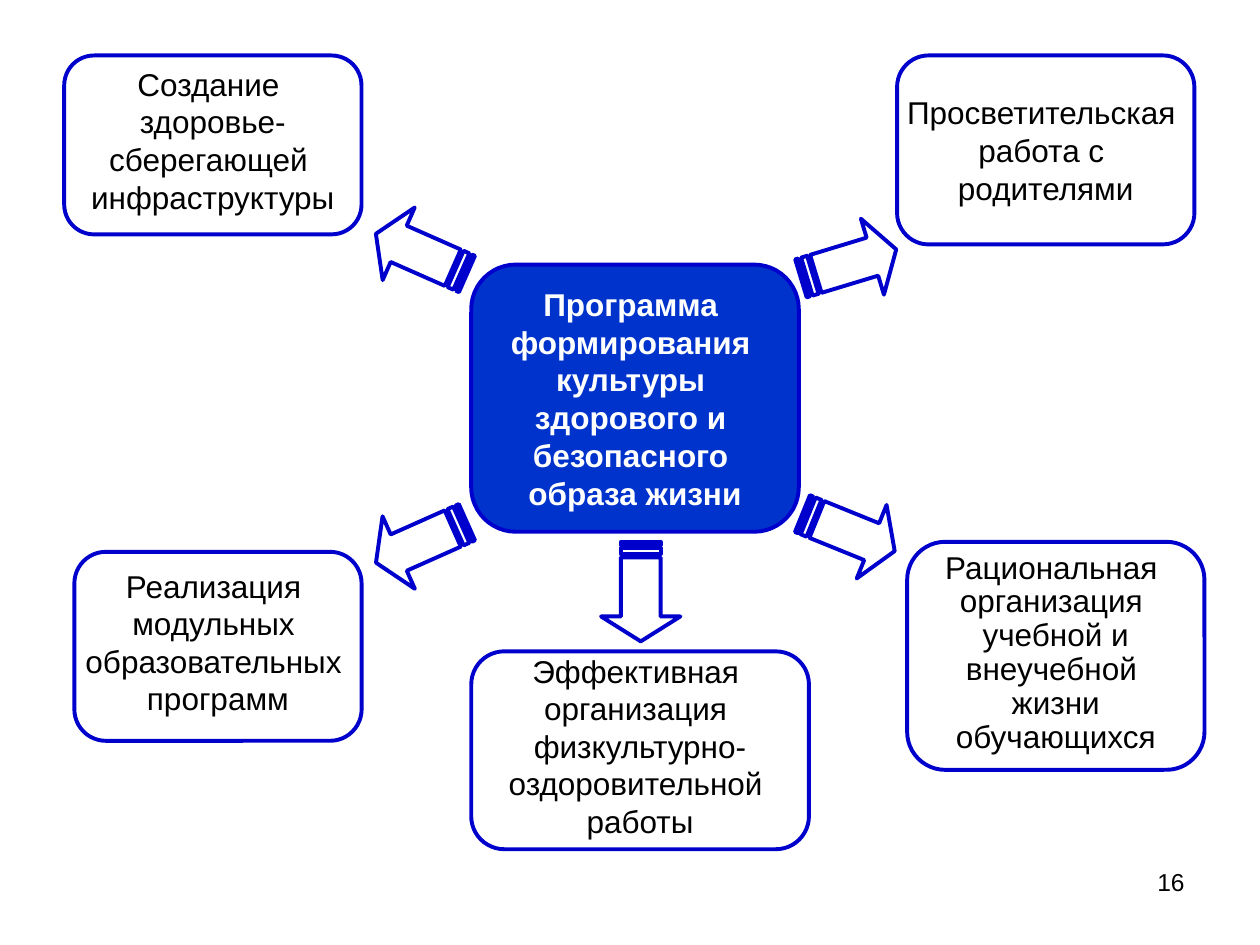
from dataclasses import dataclass
from typing import Optional

from pptx import Presentation
from pptx.dml.color import RGBColor
from pptx.enum.shapes import MSO_SHAPE
from pptx.enum.text import MSO_ANCHOR, PP_ALIGN
from pptx.util import Inches, Pt

OUTLINE = "0000CC"
CENTER_FILL = "0033CC"
BLACK = "000000"
WHITE = "FFFFFF"
FONT = "Arial"
HANGING_INDENT = Inches(0.38)
ARROW_WIDTH, ARROW_HEIGHT = 0.79, 0.63
ARROW_GRID = 1000
ARROW_OUTLINES = [
    [(750, 0), (750, 250), (156, 250), (156, 750), (750, 750), (750, 1000), (1000, 500)],
    [(62, 250), (62, 750), (125, 750), (125, 250)],
    [(0, 250), (0, 750), (31, 750), (31, 250)],
]


@dataclass
class Topic:
    left: float
    top: float
    width: float
    height: float
    lines: list[str]
    first_spacing: Optional[float] = 0.75
    other_spacing: Optional[float] = None
    central: bool = False


@dataclass
class Arrow:
    left: float
    top: float
    rotation: float


TOPICS = [
    Topic(7.12, 0.44, 2.36, 1.5, ["Просветительская ", "работа с ", "родителями"], None),
    Topic(0.51, 0.44, 2.36, 1.42,
          ["Создание ", "здоровье-", "сберегающей ", "инфраструктуры"]),
    Topic(3.74, 2.1, 2.6, 2.12,
          ["Программа ", "формирования ", "культуры ", "здорового и ",
           "безопасного ", "образа жизни"], None, central=True),
    Topic(3.74, 5.17, 2.68, 1.57,
          ["Эффективная ", "организация ", "физкультурно-", "оздоровительной ", "работы"]),
    Topic(7.2, 4.3, 2.36, 1.81,
          ["Рациональная ", "организация ", "учебной и", "внеучебной ",
           "жизни", "обучающихся"], other_spacing=0.9),
    Topic(0.59, 4.38, 2.28, 1.5,
          ["Реализация ", "модульных ", "образовательных ", "программ"]),
]

ARROWS = [
    Arrow(2.95, 3.99, 156),
    Arrow(2.95, 1.7, 203.8),
    Arrow(6.34, 1.78, 343.1),
    Arrow(6.34, 3.91, 22.1),
    Arrow(4.69, 4.38, 90),
]


def color(value: str) -> RGBColor:
    return RGBColor.from_string(value)


def style_shape(shape, fill: Optional[str] = None) -> None:
    shape.shadow.inherit = False
    shape.line.color.rgb = color(OUTLINE)
    shape.line.width = Pt(2.25)
    if fill:
        shape.fill.solid()
        shape.fill.fore_color.rgb = color(fill)
    else:
        shape.fill.background()


def style_paragraph(para, size: int, text_color: str, align, bold: bool = False) -> None:
    para.alignment = align
    para.font.name = FONT
    para.font.size = Pt(size)
    para.font.bold = bold
    para.font.color.rgb = color(text_color)


def draw_topic(page, topic: Topic) -> None:
    box = page.shapes.add_shape(
        MSO_SHAPE.ROUNDED_RECTANGLE, Inches(topic.left), Inches(topic.top),
        Inches(topic.width), Inches(topic.height))
    style_shape(box, CENTER_FILL if topic.central else None)
    frame = box.text_frame
    frame.word_wrap = False
    frame.vertical_anchor = MSO_ANCHOR.MIDDLE
    for index, line in enumerate(topic.lines):
        para = frame.add_paragraph() if index else frame.paragraphs[0]
        para.text = line
        style_paragraph(para, 18, WHITE if topic.central else BLACK,
                        PP_ALIGN.CENTER, topic.central)
        para.line_spacing = topic.other_spacing if index else topic.first_spacing
        if index == 0 and topic.first_spacing:
            para.space_before = Pt(3.6)
        if not topic.central:
            properties = para._p.get_or_add_pPr()
            properties.set("marL", str(HANGING_INDENT))
            properties.set("indent", str(-HANGING_INDENT))


def draw_arrow(page, arrow: Arrow) -> None:
    scale = (Inches(ARROW_GRID) / Inches(ARROW_WIDTH), Inches(ARROW_GRID) / Inches(ARROW_HEIGHT))
    units = (Inches(1) / scale[0], Inches(1) / scale[1])
    first, *stripes = ARROW_OUTLINES
    builder = page.shapes.build_freeform(*first[0], scale=units)
    builder.add_line_segments(first[1:], close=True)
    for stripe in stripes:
        builder.move_to(*stripe[0])
        builder.add_line_segments(stripe[1:], close=True)
    shape = builder.convert_to_shape(Inches(arrow.left), Inches(arrow.top))
    shape.rotation = arrow.rotation
    style_shape(shape)


def draw_page_number(page) -> None:
    box = page.shapes.add_textbox(Inches(7.17), Inches(6.83), Inches(2.33), Inches(0.52))
    box.text_frame.word_wrap = True
    para = box.text_frame.paragraphs[0]
    para.text = "16"
    style_paragraph(para, 14, BLACK, PP_ALIGN.RIGHT)


def main() -> None:
    deck = Presentation()
    deck.slide_width, deck.slide_height = Inches(10), Inches(7.5)
    page = deck.slides.add_slide(deck.slide_layouts[6])
    draw_page_number(page)
    for topic in TOPICS:
        draw_topic(page, topic)
    for arrow in ARROWS:
        draw_arrow(page, arrow)
    deck.save("out.pptx")


if __name__ == "__main__":
    main()
